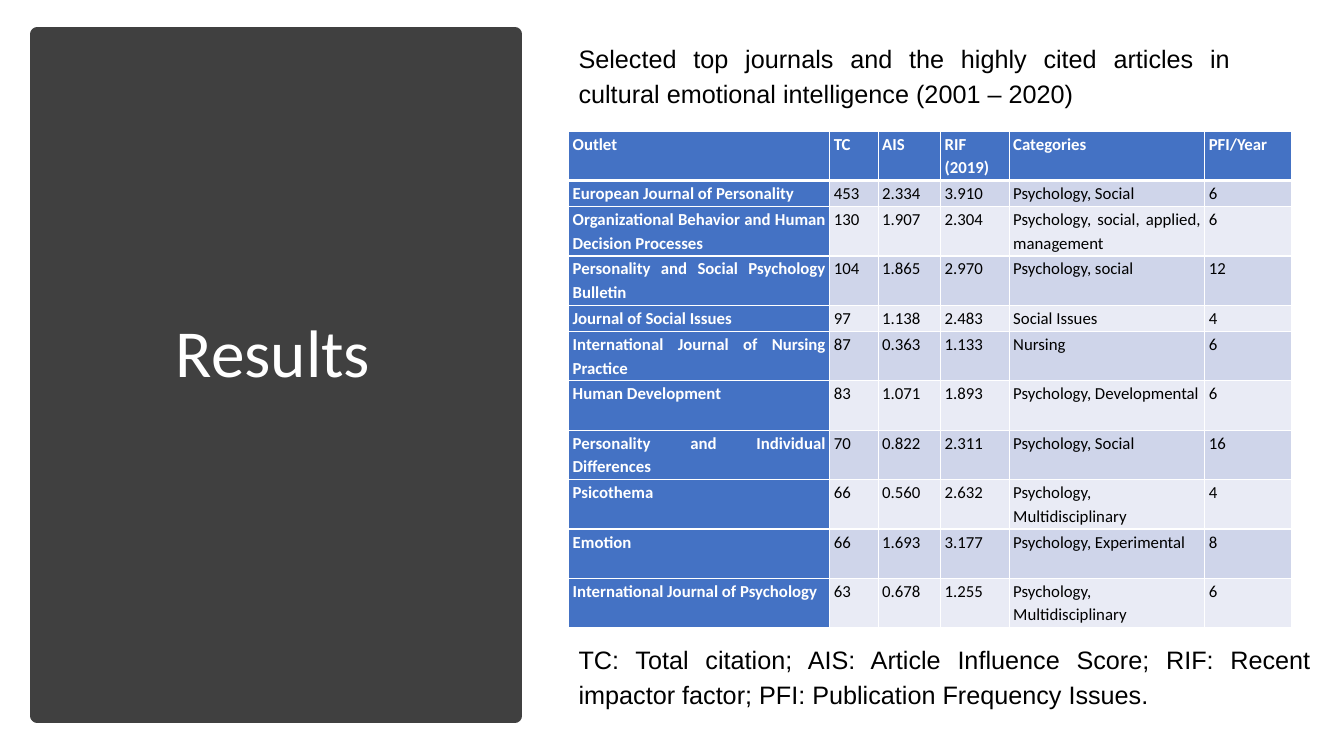
import pptx
import pptx.dml.color
import pptx.enum.shapes
import pptx.enum.text
import pptx.oxml
import pptx.oxml.ns
import pptx.util

Inches = pptx.util.Inches
Pt = pptx.util.Pt
RGBColor = pptx.dml.color.RGBColor
ALIGN = pptx.enum.text.PP_ALIGN
ANCHOR = pptx.enum.text.MSO_ANCHOR

CHARCOAL = RGBColor(0x40, 0x40, 0x40)
WHITE = RGBColor(0xFF, 0xFF, 0xFF)
BLACK = RGBColor(0, 0, 0)
BLUE = RGBColor(0x44, 0x72, 0xC4)
BANDS = (RGBColor(0xE9, 0xEB, 0xF5), RGBColor(0xCF, 0xD5, 0xEA))

COLUMN_WIDTHS = (2.59, 0.48, 0.62, 0.68, 1.94, 0.86)
SINGLE_ROW, DOUBLE_ROW = 0.26, 0.49
SINGLE_LINE_OUTLETS = ("European Journal of Personality", "Journal of Social Issues")
JOURNALS = (
    ("Outlet", "TC", "AIS", "RIF (2019)", "Categories", "PFI/Year"),
    ("European Journal of Personality", "453", "2.334", "3.910", "Psychology, Social", "6"),
    ("Organizational Behavior and Human Decision Processes", "130", "1.907", "2.304",
     "Psychology, social, applied, management", "6"),
    ("Personality and Social Psychology Bulletin", "104", "1.865", "2.970",
     "Psychology, social", "12"),
    ("Journal of Social Issues", "97", "1.138", "2.483", "Social Issues", "4"),
    ("International Journal of Nursing Practice", "87", "0.363", "1.133", "Nursing", "6"),
    ("Human Development", "83", "1.071", "1.893", "Psychology, Developmental", "6"),
    ("Personality and Individual Differences", "70", "0.822", "2.311",
     "Psychology, Social", "16"),
    ("Psicothema", "66", "0.560", "2.632", "Psychology, Multidisciplinary", "4"),
    ("Emotion", "66", "1.693", "3.177", "Psychology, Experimental", "8"),
    ("International Journal of Psychology", "63", "0.678", "1.255",
     "Psychology, Multidisciplinary", "6"),
)
HEADING = ("Selected top journals and the highly cited articles in "
           "cultural emotional intelligence (2001 – 2020)")
LEGEND = ("TC: Total citation; AIS: Article Influence Score; RIF: Recent impactor factor; "
          "PFI: Publication Frequency Issues.")


def write(frame, text, size, font, color, align=ALIGN.JUSTIFY, spacing=1.15, after=0, bold=False):
    """Fill a text frame with one styled paragraph."""
    frame.word_wrap = True
    para = frame.paragraphs[0]
    para.text = text
    para.alignment = align
    para.line_spacing = spacing
    para.space_after = Pt(after)
    para.font.size = Pt(size)
    para.font.name = font
    para.font.color.rgb = color
    para.font.bold = bold


def add_title_panel(slide, left, top, width, height):
    """Draw the dark panel with the slide title in its middle."""
    panel = slide.shapes.add_shape(
        pptx.enum.shapes.MSO_SHAPE.RECTANGLE,
        Inches(left), Inches(top), Inches(width), Inches(height))
    panel.shadow.inherit = False
    panel.fill.solid()
    panel.fill.fore_color.rgb = CHARCOAL
    panel.line.color.rgb = CHARCOAL
    panel.line.width = Pt(10)
    title = slide.shapes.add_textbox(
        Inches(left + 0.44), Inches(top + 0.47), Inches(width - 0.94), Inches(height - 1.33))
    title.text_frame.vertical_anchor = ANCHOR.MIDDLE
    write(title.text_frame, "Results", 48, "Calibri", WHITE, ALIGN.CENTER, 0.9, 6)


def add_caption(slide, text, left, top, width, height, after=0):
    """Place a justified caption in the given box."""
    box = slide.shapes.add_textbox(Inches(left), Inches(top), Inches(width), Inches(height))
    write(box.text_frame, text, 18, "Arial", BLACK, after=after)
    box.text_frame.auto_size = pptx.enum.text.MSO_AUTO_SIZE.SHAPE_TO_FIT_TEXT


def set_borders(cell, **widths):
    """Give a cell white borders; widths in points by side L, R, T, B."""
    properties = cell._tc.get_or_add_tcPr()
    for side in "LRTB":
        properties.append(pptx.oxml.parse_xml(
            f'<a:ln{side} {pptx.oxml.ns.nsdecls("a")} w="{Pt(widths.get(side, 1))}">'
            f'<a:solidFill><a:srgbClr val="{WHITE}"/></a:solidFill></a:ln{side}>'))


def style_cell(cell, text, row_index, column_index):
    """Style one table cell according to its row and column."""
    emphasised = row_index == 0 or column_index == 0
    cell.margin_left = cell.margin_right = Inches(0.04)
    cell.margin_top = cell.margin_bottom = 0
    set_borders(cell, B=3 if row_index == 0 else 1, T=3 if row_index == 1 else 1)
    cell.fill.solid()
    cell.fill.fore_color.rgb = BLUE if emphasised else BANDS[row_index % 2]
    write(cell.text_frame, text, 12, "Calibri", WHITE if emphasised else BLACK, bold=emphasised)


def add_journal_table(slide, left, top, width, height):
    """Build the table of journals."""
    table = slide.shapes.add_table(
        len(JOURNALS), len(COLUMN_WIDTHS),
        Inches(left), Inches(top), Inches(width), Inches(height)).table
    for column, column_width in zip(table.columns, COLUMN_WIDTHS):
        column.width = Inches(column_width)
    for row_index, (row, journal) in enumerate(zip(table.rows, JOURNALS)):
        row.height = Inches(SINGLE_ROW if journal[0] in SINGLE_LINE_OUTLETS else DOUBLE_ROW)
        for column_index, text in enumerate(journal):
            style_cell(row.cells[column_index], text, row_index, column_index)


def main():
    """Build and save the deck."""
    deck = pptx.Presentation()
    deck.slide_width, deck.slide_height = Inches(13.33), Inches(7.5)
    slide = deck.slides.add_slide(deck.slide_layouts[6])
    add_title_panel(slide, 0.37, 0.34, 4.74, 6.76)
    add_journal_table(slide, 5.64, 1.3, 7.17, 4.91)
    add_caption(slide, HEADING, 5.64, 0.34, 6.66, 0.78, after=10)
    add_caption(slide, LEGEND, 5.64, 6.3, 7.46, 0.78)
    deck.save("out.pptx")


if __name__ == "__main__":
    main()
